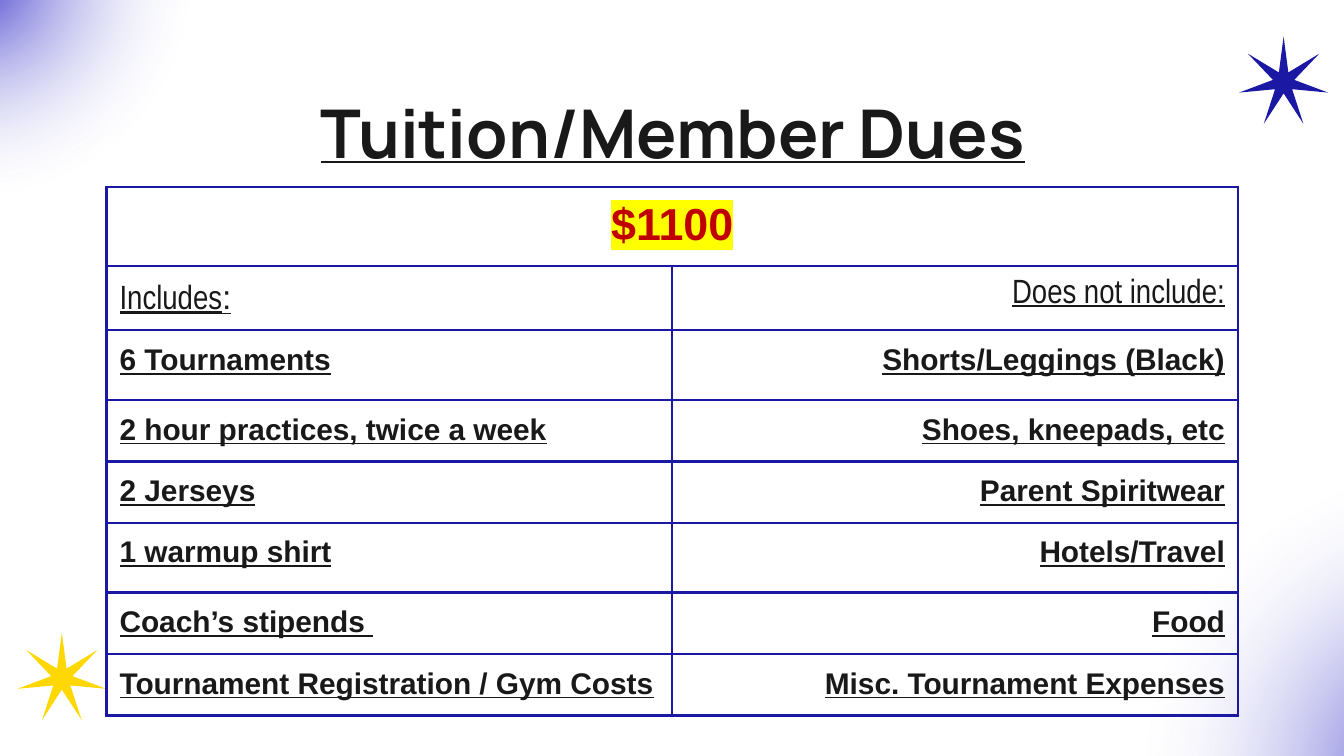
from dataclasses import dataclass

from lxml import etree
from pptx import Presentation
from pptx import util as u
from pptx.dml.color import RGBColor
from pptx.enum import shapes, text
from pptx.oxml import parse_xml
from pptx.oxml.ns import nsdecls, qn


@dataclass(frozen=True)
class Theme:
    ink: str = "191919"
    navy: str = "1B18A3"
    gold: str = "FFD803"
    glow: str = "423ECC"
    price: str = "C00000"
    marker: str = "FFFF00"
    title_font: str = "Manrope"
    body_font: str = "Arial"
    narrow_font: str = "Arial Narrow"
    title_size: int = 36
    price_size: int = 24
    heading_size: int = 18
    item_size: int = 16
    border: float = 1.5


THEME = Theme()
INSET = u.Cm(0.25)
LEFT, CENTER, RIGHT = text.PP_ALIGN.LEFT, text.PP_ALIGN.CENTER, text.PP_ALIGN.RIGHT

DUES = [
    ("6 Tournaments", "Shorts/Leggings (Black)"),
    ("2 hour practices, twice a week", "Shoes, kneepads, etc"),
    ("2 Jerseys", "Parent Spiritwear"),
    ("1 warmup shirt", "Hotels/Travel"),
    ("Coach’s stipends ", "Food"),
    ("Tournament Registration / Gym Costs", "Misc. Tournament Expenses"),
]
ROW_HEIGHTS = [1.5, 0.91, 1.32, 1.16, 1.16, 1.32, 1.16, 1.16]


def cm_box(box):
    return [u.Cm(length) for length in box]


def add_run(paragraph, words, size, font, color=THEME.ink, bold=False, underline=True):
    run = paragraph.add_run()
    run.text = words
    run.font.size = u.Pt(size)
    run.font.name = font
    run.font.bold = bold
    run.font.underline = underline
    run.font.color.rgb = RGBColor.from_string(color)
    return run


def highlight(run, color):
    marker = parse_xml(
        f'<a:highlight {nsdecls("a")}><a:srgbClr val="{color}"/></a:highlight>')
    run.font._element.find(qn("a:solidFill")).addnext(marker)


def add_decoration(slide, preset, box):
    decoration = slide.shapes.add_shape(preset, *cm_box(box))
    decoration.shadow.inherit = False
    decoration.line.fill.background()
    return decoration


def add_glow(slide, box):
    """Round glow that fades from its centre to clear."""
    glow = add_decoration(slide, shapes.MSO_SHAPE.OVAL, box)
    glow.fill.background()
    clear = '<a:srgbClr val="FFFFFF"><a:alpha val="0"/></a:srgbClr>'
    gradient = parse_xml(
        f'<a:gradFill {nsdecls("a")} rotWithShape="1"><a:gsLst>'
        f'<a:gs pos="0"><a:srgbClr val="{THEME.glow}"/></a:gs>'
        f'<a:gs pos="61000">{clear}</a:gs><a:gs pos="100000">{clear}</a:gs>'
        '</a:gsLst><a:path path="circle">'
        '<a:fillToRect l="50000" t="50000" r="50000" b="50000"/>'
        '</a:path></a:gradFill>')
    properties = glow._element.spPr
    properties.replace(properties.find(qn("a:noFill")), gradient)


def add_star(slide, box, color):
    star = add_decoration(slide, shapes.MSO_SHAPE.STAR_7_POINT, box)
    star.adjustments[0] = 0.12
    star.fill.solid()
    star.fill.fore_color.rgb = RGBColor.from_string(color)


def place_title(slide, box, words):
    title = slide.shapes.title
    title.left, title.top, title.width, title.height = cm_box(box)
    frame = title.text_frame
    frame.word_wrap = True
    frame.auto_size = text.MSO_AUTO_SIZE.NONE
    frame.vertical_anchor = text.MSO_ANCHOR.TOP
    frame.margin_left = frame.margin_right = INSET
    frame.margin_top = frame.margin_bottom = INSET
    paragraph = frame.paragraphs[0]
    paragraph.alignment = CENTER
    paragraph.line_spacing = 1.15
    paragraph.space_before = u.Pt(0)
    add_run(paragraph, words, THEME.title_size, THEME.title_font, bold=True)
    slide.shapes._spTree.append(title._element)  # in front of the glows


def format_cell(cell):
    cell.margin_left = cell.margin_right = INSET
    cell.margin_top = cell.margin_bottom = INSET
    cell.fill.background()
    properties = cell._tc.get_or_add_tcPr()
    for position, side in enumerate(("lnL", "lnR", "lnT", "lnB")):
        line = etree.Element(qn(f"a:{side}"), w=str(u.Pt(THEME.border)))
        fill = etree.SubElement(line, qn("a:solidFill"))
        etree.SubElement(fill, qn("a:srgbClr"), val=THEME.navy)
        properties.insert(position, line)


def add_dues_table(slide, box):
    left, top, width, height = cm_box(box)
    table = slide.shapes.add_table(
        len(ROW_HEIGHTS), 2, left, top, width, height).table
    table.first_row = table.horz_banding = False
    for row, row_height in zip(table.rows, ROW_HEIGHTS):
        row.height = u.Cm(row_height)
    for column in table.columns:
        column.width = width // 2
    for cell in table.iter_cells():
        format_cell(cell)

    def paragraph_at(row, column, alignment):
        paragraph = table.cell(row, column).text_frame.paragraphs[0]
        paragraph.alignment = alignment
        return paragraph

    # Price across both columns
    table.cell(0, 0).merge(table.cell(0, 1))
    price = add_run(paragraph_at(0, 0, CENTER), "$1100", THEME.price_size,
                    THEME.body_font, THEME.price, bold=True, underline=False)
    highlight(price, THEME.marker)

    # Column headings
    includes = paragraph_at(1, 0, LEFT)
    add_run(includes, "Includes", THEME.heading_size, THEME.narrow_font)
    add_run(includes, ":", THEME.heading_size, THEME.body_font)
    add_run(paragraph_at(1, 1, RIGHT), "Does not include:",
            THEME.heading_size, THEME.narrow_font)

    # Items
    for row, pair in enumerate(DUES, start=2):
        for column, item in enumerate(pair):
            paragraph = paragraph_at(row, column, (LEFT, RIGHT)[column])
            if column == 1 and item != "Hotels/Travel":
                paragraph.space_after = u.Pt(16)
            add_run(paragraph, item, THEME.item_size, THEME.body_font, bold=True)


def main():
    deck = Presentation()
    deck.slide_width, deck.slide_height = u.Cm(25.4), u.Cm(14.29)
    slide = deck.slides.add_slide(deck.slide_layouts[5])

    # Background decoration
    add_glow(slide, (20.4, 7.65, 14.07, 14.07))
    add_glow(slide, (-5.51, -5.41, 9.96, 9.96))
    add_star(slide, (0.33, 11.96, 1.68, 1.65), THEME.gold)
    add_star(slide, (23.42, 0.69, 1.68, 1.65), THEME.navy)

    # Content
    add_dues_table(slide, (2.01, 3.53, 21.39, sum(ROW_HEIGHTS)))
    place_title(slide, (2.01, 1.24, 21.41, 1.6), "Tuition/Member Dues")
    deck.save("out.pptx")


if __name__ == "__main__":
    main()
